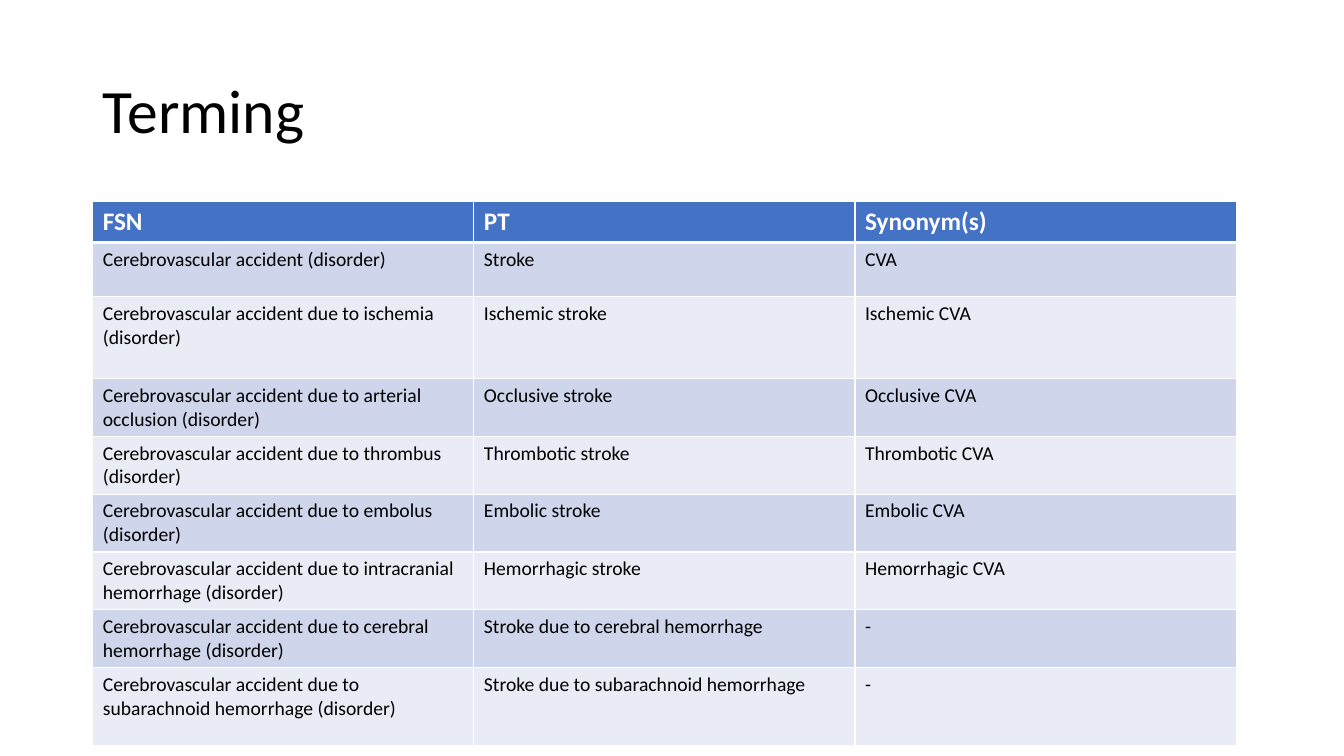
from lxml import etree
from pptx import Presentation
from pptx import util as u
from pptx.dml.color import RGBColor
from pptx.enum import text
from pptx.oxml import ns

HEADER_FILL = "4472C4"
BAND_FILLS = ("CFD5EA", "E9EBF5")
WHITE = "FFFFFF"
BLACK = "000000"

TERMS = [
    ("FSN", "PT", "Synonym(s)"),
    ("Cerebrovascular accident (disorder)", "Stroke", "CVA"),
    ("Cerebrovascular accident due to ischemia (disorder)", "Ischemic stroke", "Ischemic CVA"),
    ("Cerebrovascular accident due to arterial occlusion (disorder)", "Occlusive stroke", "Occlusive CVA"),
    ("Cerebrovascular accident due to thrombus (disorder)", "Thrombotic stroke", "Thrombotic CVA"),
    ("Cerebrovascular accident due to embolus (disorder)", "Embolic stroke", "Embolic CVA"),
    ("Cerebrovascular accident due to intracranial hemorrhage (disorder)", "Hemorrhagic stroke", "Hemorrhagic CVA"),
    ("Cerebrovascular accident due to cerebral hemorrhage (disorder)", "Stroke due to cerebral hemorrhage", "-"),
    ("Cerebrovascular accident due to subarachnoid hemorrhage (disorder)", "Stroke due to subarachnoid hemorrhage", "-"),
]
ROW_HEIGHTS = [0.39, 0.54, 0.81] + [0.57] * 5 + [0.77]


def color(value):
    return RGBColor.from_string(value)


class SlideBuilder:
    font_name = "Calibri"

    def __init__(self, presentation):
        self.slide = presentation.slides.add_slide(presentation.slide_layouts[5])

    def format_runs(self, paragraph, size, font_color, bold=False):
        for run in paragraph.runs:
            run.font.name = self.font_name
            run.font.size = u.Pt(size)
            run.font.bold = bold
            run.font.color.rgb = color(font_color)

    def title(self, wording, left, top, width, height):
        shape = self.slide.shapes.title
        shape.left, shape.top = u.Inches(left), u.Inches(top)
        shape.width, shape.height = u.Inches(width), u.Inches(height)
        frame = shape.text_frame
        frame.text = wording
        frame.word_wrap = True
        frame.vertical_anchor = text.MSO_ANCHOR.MIDDLE
        paragraph = frame.paragraphs[0]
        paragraph.alignment = text.PP_ALIGN.LEFT
        paragraph.line_spacing = 0.9
        self.format_runs(paragraph, 44, BLACK)

    def borders(self, cell, top_width, bottom_width):
        properties = cell._tc.get_or_add_tcPr()
        widths = {"a:lnL": 1, "a:lnR": 1, "a:lnT": top_width, "a:lnB": bottom_width}
        for position, (tag, width) in enumerate(widths.items()):
            line = etree.Element(ns.qn(tag), w=str(u.Pt(width)))
            fill = etree.SubElement(line, ns.qn("a:solidFill"))
            etree.SubElement(fill, ns.qn("a:srgbClr"), val=WHITE)
            properties.insert(position, line)

    def table(self, rows, heights, left, top, width):
        columns = len(rows[0])
        frame = self.slide.shapes.add_table(
            len(rows), columns, u.Inches(left), u.Inches(top),
            u.Inches(width), u.Inches(sum(heights)))
        table = frame.table
        for row_index, (row, height) in enumerate(zip(rows, heights)):
            table.rows[row_index].height = u.Inches(height)
            header = row_index == 0
            for column_index, wording in enumerate(row):
                cell = table.cell(row_index, column_index)
                cell.text_frame.text = wording
                cell.fill.solid()
                cell.fill.fore_color.rgb = color(
                    HEADER_FILL if header else BAND_FILLS[(row_index - 1) % 2])
                self.format_runs(cell.text_frame.paragraphs[0], 18 if header else 14,
                                 WHITE if header else BLACK, header)
                self.borders(cell, 3 if row_index == 1 else 1, 3 if header else 1)


def main():
    presentation = Presentation()
    presentation.slide_width = u.Inches(13.33)
    presentation.slide_height = u.Inches(7.5)
    builder = SlideBuilder(presentation)
    builder.title("Terming", 0.92, 0.4, 11.5, 1.45)
    builder.table(TERMS, ROW_HEIGHTS, 0.92, 2, 11.34)
    presentation.save("out.pptx")


if __name__ == "__main__":
    main()
